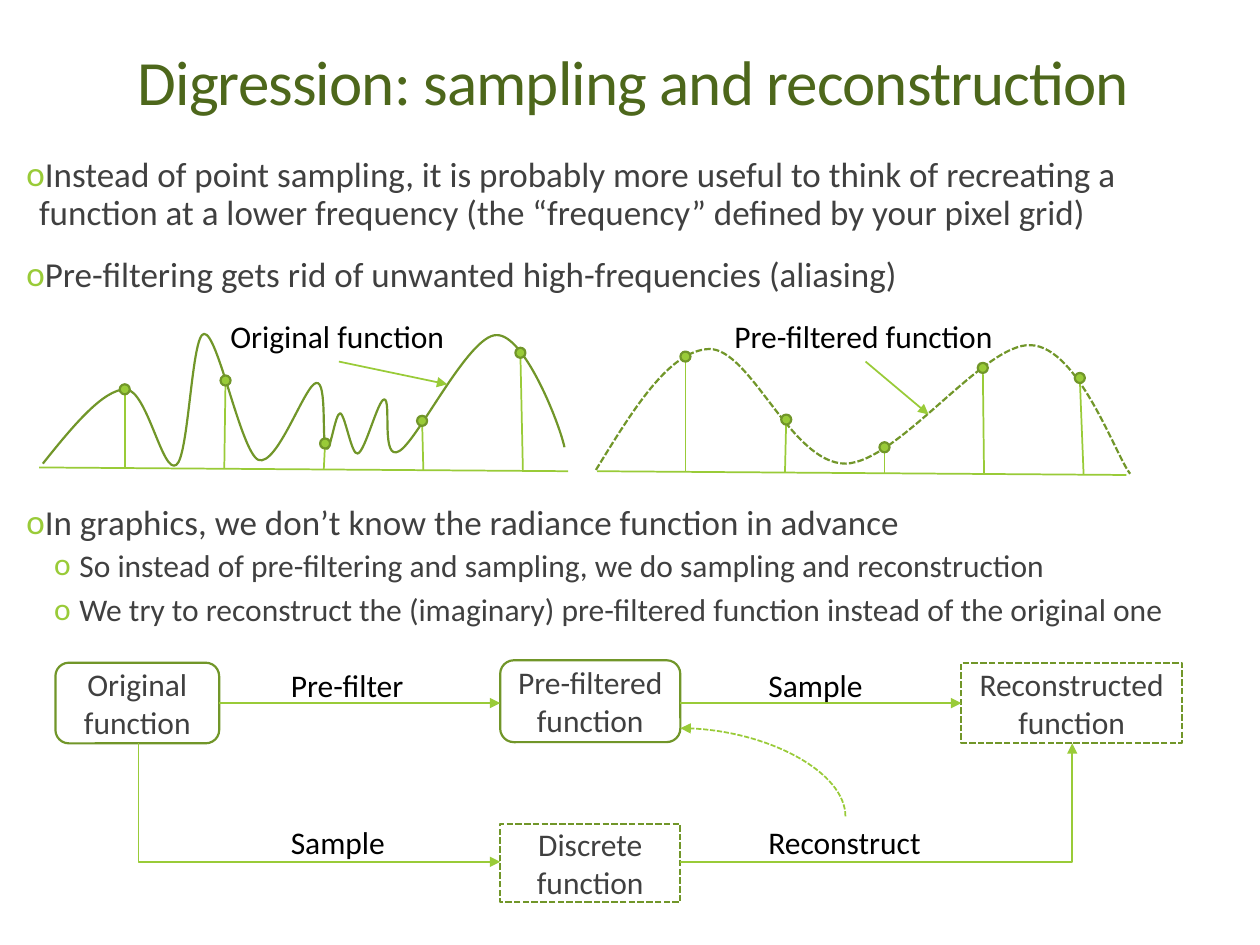
from lxml import etree
from pptx import Presentation
from pptx.dml.color import RGBColor
from pptx.enum import dml, shapes as sh, text as tx
from pptx.oxml import ns
from pptx.util import Inches, Pt

GREEN, DARK, TITLE = "99CB38", "719629", "4D671B"
GREY, BLACK = "404040", "000000"
FONT = "Calibri"
DASH = dml.MSO_LINE.SQUARE_DOT


def color(code):
    return RGBColor.from_string(code)


def sub(node, tag, **attrs):
    return etree.SubElement(node, ns.qn(tag), attrs)


def style(para, size, code):
    for run in para.runs:
        run.font.name, run.font.size = FONT, Pt(size)
        run.font.color.rgb = color(code)


def ink(line, code, width, dash=False):
    line.color.rgb = color(code)
    line.width = Pt(width)
    if dash:
        line.dash_style = DASH


def text_box(slide, x, y, w, h):
    frame = slide.shapes.add_textbox(
        Inches(x), Inches(y), Inches(w), Inches(h)).text_frame
    frame.word_wrap = True
    return frame


def label(slide, x, y, w, words):
    frame = text_box(slide, x, y, w, 0.4)
    frame.word_wrap = False
    frame.text = words
    style(frame.paragraphs[0], 18, BLACK)


def link(slide, a, b, arrow=False, dash=False, kind="line", upright=False):
    """Connector from a to b; an upright one leaves a vertically."""
    (ax, ay), (bx, by) = a, b
    if upright:  # undo the 270 degree rotation about the centre
        cx, cy = (ax + bx) / 2, (ay + by) / 2
        ax, ay, bx, by = (cx - (ay - cy), cy + (ax - cx),
                          cx - (by - cy), cy + (bx - cx))
    line = slide.shapes.add_connector(
        sh.MSO_CONNECTOR.STRAIGHT,
        Inches(ax), Inches(ay), Inches(bx), Inches(by))
    ink(line.line, GREEN, 1, dash)
    props = line._element.spPr
    props.find(ns.qn("a:prstGeom")).set("prst", kind)
    if upright:
        props.find(ns.qn("a:xfrm")).set("rot", "16200000")
    if arrow:
        sub(props.find(ns.qn("a:ln")), "a:tailEnd", type="triangle")
    sub(props, "a:effectLst")


def shape(slide, kind, x, y, w, h, fill=None, dash=False):
    item = slide.shapes.add_shape(
        kind, Inches(x), Inches(y), Inches(w), Inches(h))
    item.shadow.inherit = False
    if fill:
        item.fill.solid()
        item.fill.fore_color.rgb = color(fill)
    else:
        item.fill.background()
    ink(item.line, DARK, 1.25, dash)
    return item


def curve(slide, points, dash):
    """Bezier curve: a start point, then three points per segment."""
    spots = [(Inches(px), Inches(py)) for px, py in points]
    pen = slide.shapes.build_freeform(*spots[0])
    pen.add_line_segments(spots[1:], close=False)
    item = pen.convert_to_shape()
    item.shadow.inherit = False
    item.fill.background()
    ink(item.line, DARK, 1.25, dash)
    steps = list(item._element.iter(ns.qn("a:lnTo")))
    track = steps[0].getparent()
    for i in range(0, len(steps), 3):
        bend = sub(track, "a:cubicBezTo")
        for step in steps[i:i + 3]:
            bend.append(step[0])
            track.remove(step)


def heading(slide, x, y, w, h):
    frame = text_box(slide, x, y, w, h)
    frame.vertical_anchor = tx.MSO_ANCHOR.BOTTOM
    frame.text = "Digression: sampling and reconstruction"
    para = frame.paragraphs[0]
    para.alignment, para.line_spacing = tx.PP_ALIGN.CENTER, 0.85
    style(para, 36, TITLE)
    para.runs[0].font._element.set("spc", "-50")


def body(slide, x, y, w, h):
    # level, space before, wording; the third leaves room for the plots
    items = [
        (0, 0, "Instead of point sampling, it is probably more useful to "
               "think of recreating a function at a lower frequency (the "
               "“frequency” defined by your pixel grid)"),
        (0, 12, "Pre-filtering gets rid of unwanted high-frequencies "
                "(aliasing)"),
        (0, 118, "In graphics, we don’t know the radiance function in "
                 "advance"),
        (1, 2, "So instead of pre-filtering and sampling, we do sampling "
               "and reconstruction"),
        (1, 2, "We try to reconstruct the (imaginary) pre-filtered function "
               "instead of the original one"),
    ]
    frame = text_box(slide, x, y, w, h)
    frame.margin_left = frame.margin_right = 0
    frame.text = "\n".join(words for _, _, words in items)
    for para, (level, gap, _) in zip(frame.paragraphs, items):
        para.level, para.line_spacing = level, 0.9
        para.space_before, para.space_after = Pt(gap), Pt((2, 4)[level])
        style(para, (20, 18)[level], GREY)
        props = para._p.get_or_add_pPr()
        props.set("marL", str(Inches((0.1, 0.42)[level])))
        props.set("indent", str(-Inches((0.1, 0.2)[level])))
        sub(sub(props, "a:buClr"), "a:srgbClr", val=GREEN)
        sub(props, "a:buFont", typeface=FONT)
        sub(props, "a:buChar", char="o")


def plot(slide, x, y, path, base, foot, dots, name, arrow, dash=False):
    """Curve with base line, evenly spaced stems, sample dots and label."""
    def at(px, py):
        return x + px, y + py

    curve(slide, [at(*point) for point in path], dash)
    left, low = base
    link(slide, at(left, low), at(left + 4.2, low + 0.03))
    size = 0.08
    for i, (dx, dy) in enumerate(dots):
        fx = foot + 0.79 * i
        link(slide, at(fx, low + 0.03 * fx / 4.2), at(dx, dy))
    for dx, dy in dots:
        shape(slide, sh.MSO_SHAPE.OVAL, *at(dx - size / 2, dy - size / 2),
              size, size, GREEN)
    lx, lw, words = name
    label(slide, x + lx, y, lw, words)
    link(slide, at(*arrow[0]), at(*arrow[1]), arrow=True)


def flow(slide, x, y):
    """Boxes joined by arrows: the upper and the lower way."""
    def at(px, py):
        return x + px, y + py

    rect, rounded = sh.MSO_SHAPE.RECTANGLE, sh.MSO_SHAPE.ROUNDED_RECTANGLE
    for kind, bx, by, w, h, words in (
            (rounded, 0, 0.02, 1.3, 0.64, "Original function"),
            (rounded, 3.53, 0, 1.43, 0.65, "Pre-filtered function"),
            (rect, 7.19, 0.02, 1.75, 0.64, "Reconstructed function"),
            (rect, 3.53, 1.3, 1.43, 0.62, "Discrete function")):
        box = shape(slide, kind, *at(bx, by), w, h, dash=kind == rect)
        frame = box.text_frame
        frame.vertical_anchor = tx.MSO_ANCHOR.MIDDLE
        frame.text = words
        frame.paragraphs[0].alignment = tx.PP_ALIGN.CENTER
        style(frame.paragraphs[0], 18, GREY)
    # Arrows
    bent, curved = "bentConnector2", "curvedConnector2"
    link(slide, at(1.3, 0.34), at(3.53, 0.34), True)
    link(slide, at(4.96, 0.34), at(7.19, 0.34), True)
    link(slide, at(0.66, 0.66), at(3.53, 1.6), True, kind=bent, upright=True)
    link(slide, at(4.96, 1.6), at(8.07, 0.66), True, kind=bent)
    link(slide, at(6.27, 1.24), at(4.96, 0.54), True, True, curved, True)
    # Step names
    for lx, ly, w, words in ((1.77, 0, 1.11, "Pre-filter"),
                             (5.56, 0, 0.96, "Sample"),
                             (1.77, 1.24, 0.96, "Sample"),
                             (5.56, 1.24, 1.42, "Reconstruct")):
        label(slide, *at(lx, ly), w, words)


def main():
    deck = Presentation()
    deck.slide_width, deck.slide_height = Inches(10), Inches(7.5)
    slide = deck.slides.add_slide(deck.slide_layouts[6])
    heading(slide, 0.9, 0.31, 8.25, 0.68)
    body(slide, 0.21, 1.2, 9.61, 6.14)
    plot(slide, 0.31, 2.47,
         [(0.03, 1.21), (0.27, 0.91), (0.51, 0.62), (0.69, 0.62),
          (0.86, 0.63), (0.98, 1.3), (1.09, 1.22),
          (1.19, 1.15), (1.21, 0.18), (1.31, 0.18),
          (1.42, 0.17), (1.6, 1.11), (1.74, 1.18),
          (1.89, 1.24), (2.11, 0.58), (2.2, 0.57),
          (2.29, 0.55), (2.24, 1.05), (2.28, 1.09),
          (2.31, 1.13), (2.35, 0.81), (2.39, 0.81),
          (2.43, 0.82), (2.48, 1.15), (2.53, 1.13),
          (2.59, 1.11), (2.69, 0.7), (2.74, 0.7),
          (2.8, 0.7), (2.71, 1.2), (2.86, 1.11),
          (3.01, 1.02), (3.41, 0.19), (3.63, 0.19),
          (3.85, 0.18), (4.13, 0.89), (4.17, 1.08)],
         (0, 1.24), 0.68,
         [(0.68, 0.62), (1.48, 0.55), (2.27, 1.05), (3.04, 0.87),
          (3.82, 0.33)],
         (1.42, 1.92, "Original function"), [(2.38, 0.4), (3.24, 0.58)])
    plot(slide, 4.73, 2.47,
         [(0, 1.26), (0.29, 0.79), (0.58, 0.31), (0.9, 0.3),
          (1.23, 0.3), (1.55, 1.21), (1.98, 1.21),
          (2.4, 1.2), (3.08, 0.25), (3.45, 0.27),
          (3.83, 0.28), (4.13, 1.16), (4.24, 1.29)],
         (0.01, 1.27), 0.71,
         [(0.71, 0.36), (1.51, 0.86), (2.29, 1.08), (3.07, 0.45),
          (3.84, 0.53)],
         (1, 2.28, "Pre-filtered function"), [(2.14, 0.4), (2.64, 0.82)],
         dash=True)
    flow(slide, 0.44, 5.24)
    deck.save("out.pptx")


if __name__ == "__main__":
    main()
